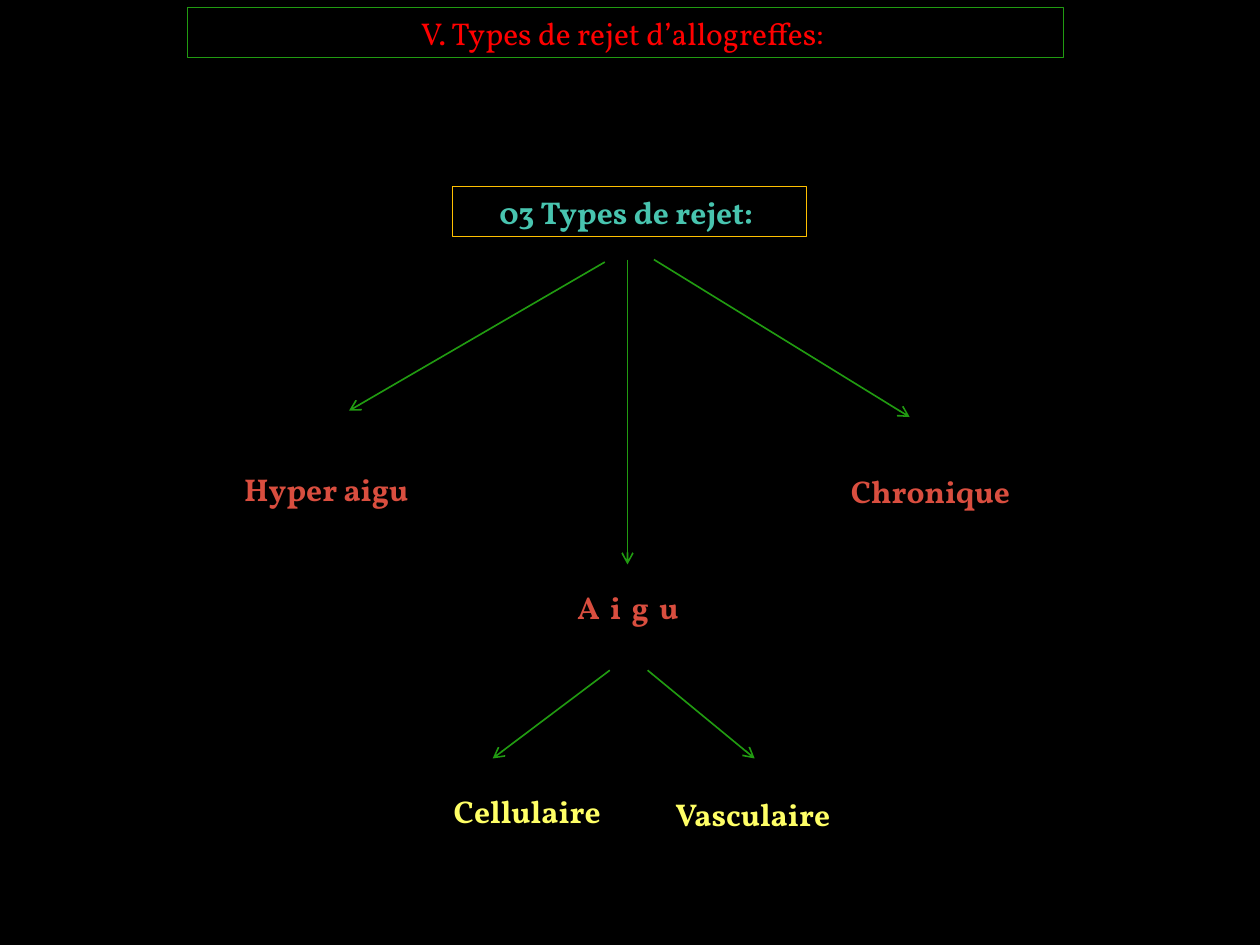
from lxml.etree import SubElement
from pptx import Presentation
from pptx.dml.color import RGBColor
from pptx.enum.shapes import MSO_CONNECTOR, MSO_SHAPE
from pptx.enum.text import MSO_ANCHOR, MSO_AUTO_SIZE, PP_ALIGN
from pptx.oxml.ns import qn
from pptx.util import Inches, Pt

GREEN, ORANGE, RED = "219B11", "FFC000", "FF0000"
TEAL, CORAL, YELLOW = "48C4AF", "D94E3F", "FFFF66"
LABEL_WIDTH, LABEL_HEIGHT = 2.27, 0.4
FRAME_FORMAT = {
    "word_wrap": True,
    "auto_size": MSO_AUTO_SIZE.SHAPE_TO_FIT_TEXT,
    "vertical_anchor": MSO_ANCHOR.TOP,
}


def color(value):
    return RGBColor.from_string(value)


def write(holder, wording, ink, bold):
    for name, value in FRAME_FORMAT.items():
        setattr(holder.text_frame, name, value)
    paragraph = holder.text_frame.paragraphs[0]
    paragraph.alignment = PP_ALIGN.CENTER
    run = paragraph.add_run()
    run.text = wording
    for name, value in {"name": "Vollkorn", "size": Pt(18), "bold": bold}.items():
        setattr(run.font, name, value)
    run.font.color.rgb = color(ink)
    return run


presentation = Presentation()
presentation.slide_width = Inches(10)
presentation.slide_height = Inches(7.5)
slide = presentation.slides.add_slide(presentation.slide_layouts[6])
slide.background.fill.solid()
slide.background.fill.fore_color.rgb = color("000000")

headings = [
    ("V. Types de rejet d’allogreffes: ", 1.49, 0.06, 6.95, GREEN, RED, False),
    ("03 Types de rejet: ", 3.59, 1.48, 2.81, ORANGE, TEAL, True),
]
for wording, left, top, width, border, ink, bold in headings:
    heading = slide.shapes.add_shape(
        MSO_SHAPE.RECTANGLE, Inches(left), Inches(top), Inches(width), Inches(LABEL_HEIGHT)
    )
    heading.shadow.inherit = False
    heading.fill.background()
    heading.line.color.rgb = color(border)
    heading.line.width = Pt(0.75)
    write(heading, wording, ink, bold)

rejection_types = [
    ("Hyper aigu ", 1.48, 3.68, CORAL, 0),
    (" Aigu ", 3.85, 4.62, CORAL, 6),
    ("Chronique", 6.25, 3.7, CORAL, 0),
    ("Cellulaire", 3.05, 6.24, YELLOW, 0),
    ("Vasculaire", 4.84, 6.26, YELLOW, 0),
]
for wording, left, top, ink, spacing in rejection_types:
    rejection = slide.shapes.add_textbox(
        Inches(left), Inches(top), Inches(LABEL_WIDTH), Inches(LABEL_HEIGHT)
    )
    run = write(rejection, wording, ink, True)
    if spacing:
        run.font._element.set("spc", str(spacing * 100))

branches = [
    (4.8, 2.08, 2.77, 3.26),
    (5.19, 2.06, 7.22, 3.31),
    (4.98, 2.06, 4.98, 4.48),
    (4.84, 5.32, 3.91, 6.02),
    (5.14, 5.32, 5.99, 6.02),
]
for ends in branches:
    branch = slide.shapes.add_connector(MSO_CONNECTOR.STRAIGHT, *map(Inches, ends))
    branch.line.color.rgb = color(GREEN)
    branch.line.width = Pt(0.94)
    SubElement(branch.line._get_or_add_ln(), qn("a:tailEnd"), type="arrow")
    SubElement(branch._element.spPr, qn("a:effectLst"))

presentation.save("out.pptx")
